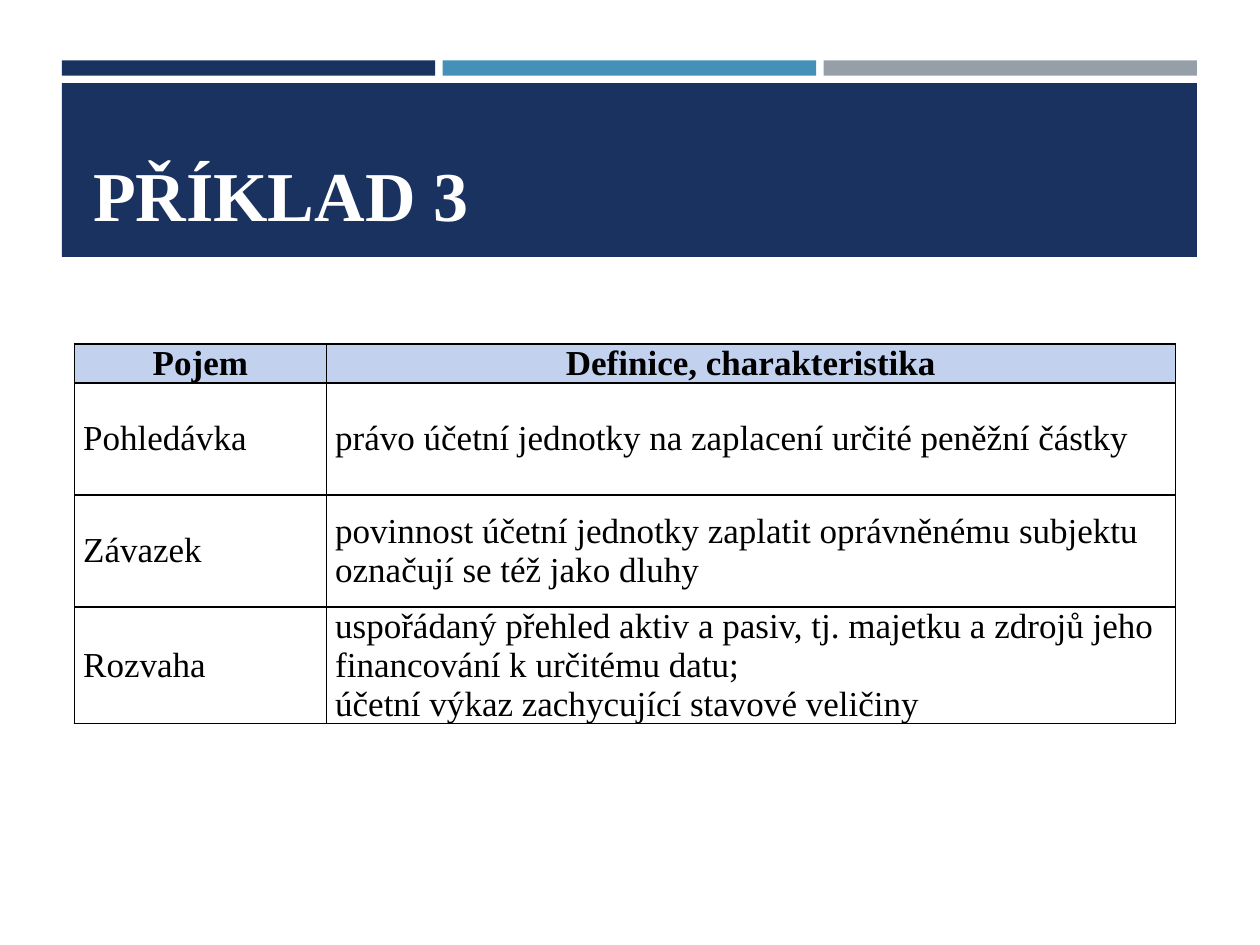
import pptx
import pptx.util
import pptx.dml.color
import pptx.enum.shapes
import pptx.enum.text
import pptx.oxml
import pptx.oxml.ns
from pptx.util import Inches

RGBColor = pptx.dml.color.RGBColor
Pt = pptx.util.Pt
MIDDLE = pptx.enum.text.MSO_ANCHOR.MIDDLE
ALIGN = pptx.enum.text.PP_ALIGN

NAVY = RGBColor(0x1A, 0x32, 0x60)
BLUE = RGBColor(0x45, 0x90, 0xB8)
GREY = RGBColor(0x96, 0x9F, 0xA7)
HEADER_BLUE = RGBColor(0xC2, 0xD1, 0xEE)
WHITE = RGBColor(0xFF, 0xFF, 0xFF)
BLACK = RGBColor(0, 0, 0)
FONT = "Times New Roman"

HEADINGS = ["Pojem", "Definice, charakteristika"]
TERMS = [
    ("Pohledávka", ["právo účetní jednotky na zaplacení určité peněžní částky"]),
    ("Závazek", ["povinnost účetní jednotky zaplatit oprávněnému subjektu",
                 "označují se též jako dluhy"]),
    ("Rozvaha", ["uspořádaný přehled aktiv a pasiv, tj. majetku a zdrojů jeho "
                 "financování k určitému datu;",
                 "účetní výkaz zachycující stavové veličiny"]),
]


def set_font(paragraph, size, color, bold):
    font = paragraph.font
    font.name, font.size, font.bold = FONT, Pt(size), bold
    font.color.rgb = color


def add_bar(slide, left, top, width, height, color):
    bar = slide.shapes.add_shape(
        pptx.enum.shapes.MSO_SHAPE.RECTANGLE, left, top, width, height)
    bar.shadow.inherit = False
    bar.fill.solid()
    bar.fill.fore_color.rgb = color
    bar.line.fill.background()


def add_header(slide, left, top, width, height, text):
    """Three thin stripes above a band that carries the title."""
    gap, stripe_height = Inches(0.06), Inches(0.12)
    stripe_width = (width - 2 * gap) // 3
    for i, color in enumerate([NAVY, BLUE, GREY]):
        add_bar(slide, left + i * (stripe_width + gap), top,
                stripe_width, stripe_height, color)
    band_top = top + stripe_height + gap
    band_height = height - stripe_height - gap
    add_bar(slide, left, band_top, width, band_height, NAVY)

    title = slide.shapes.title
    slide.shapes._spTree.append(title._element)  # in front of the band
    title.left, title.top = left + Inches(0.15), band_top + Inches(0.09)
    title.width, title.height = width - Inches(0.27), band_height - Inches(0.2)
    frame = title.text_frame
    frame.text = text
    frame.word_wrap = True
    frame.vertical_anchor = pptx.enum.text.MSO_ANCHOR.BOTTOM
    paragraph = frame.paragraphs[0]
    paragraph.alignment = ALIGN.LEFT
    paragraph.line_spacing = 0.9
    set_font(paragraph, 40, WHITE, True)


def add_borders(cell):
    properties = cell._tc.get_or_add_tcPr()
    for position, side in enumerate(["lnL", "lnR", "lnT", "lnB"]):
        properties.insert(position, pptx.oxml.parse_xml(
            f'<a:{side} {pptx.oxml.ns.nsdecls("a")} w="{Pt(1)}"><a:solidFill>'
            f'<a:srgbClr val="{BLACK}"/></a:solidFill></a:{side}>'))


def fill_cell(cell, lines, alignment, header=False):
    cell.margin_left = cell.margin_right = Inches(0.07)
    cell.margin_top = cell.margin_bottom = 0
    cell.vertical_anchor = MIDDLE
    if header:
        cell.fill.solid()
        cell.fill.fore_color.rgb = HEADER_BLUE
    else:
        cell.fill.background()
    add_borders(cell)
    cell.text = "\n".join(lines)
    for paragraph in cell.text_frame.paragraphs:
        paragraph.alignment = alignment
        if len(lines) == 1:
            paragraph.space_before = paragraph.space_after = Pt(6)
        set_font(paragraph, 20, BLACK, header)


def add_terms_table(slide, left, top, width):
    header_height, row_height = Inches(0.26), Inches(0.89)
    table = slide.shapes.add_table(
        len(TERMS) + 1, 2, left, top, width,
        header_height + len(TERMS) * row_height).table
    table.columns[0].width = Inches(2)
    table.columns[1].width = width - Inches(2)
    table.rows[0].height = header_height
    for column, heading in enumerate(HEADINGS):
        fill_cell(table.cell(0, column), [heading], ALIGN.CENTER, header=True)
    for row, (term, definition) in enumerate(TERMS, start=1):
        table.rows[row].height = row_height
        fill_cell(table.cell(row, 0), [term], ALIGN.LEFT)
        fill_cell(table.cell(row, 1), definition,
                  ALIGN.JUSTIFY if len(definition) == 1 else ALIGN.LEFT)


def main():
    deck = pptx.Presentation()
    deck.slide_width, deck.slide_height = Inches(10), Inches(7.5)
    slide = deck.slides.add_slide(deck.slide_layouts[5])
    add_header(slide, Inches(0.49), Inches(0.48), Inches(9.01), Inches(1.56),
               "PŘÍKLAD 3")
    add_terms_table(slide, Inches(0.59), Inches(2.73), Inches(8.74))
    deck.save("out.pptx")


if __name__ == "__main__":
    main()
